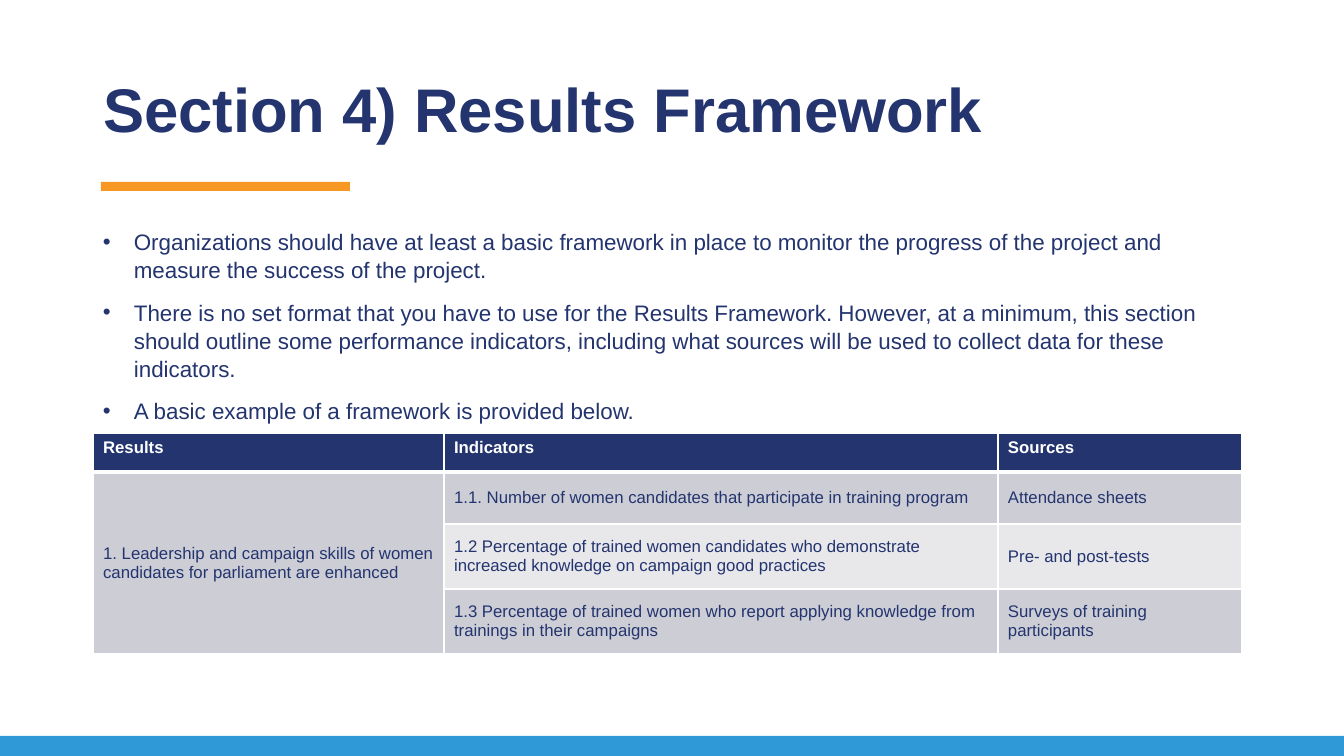
from lxml.etree import SubElement
from pptx import Presentation
from pptx.dml.color import RGBColor
from pptx.enum.shapes import MSO_SHAPE as Shape
from pptx.enum.text import MSO_ANCHOR as Anchor, MSO_AUTO_SIZE as AutoSize, PP_ALIGN as Align
from pptx.oxml.ns import qn
from pptx.util import Pt

EMU_PER_PX = 914400 / 100.8
COLORS = {
    "navy": "23346F", "orange": "F89824", "blue": "2E99D6",
    "white": "FFFFFF", "band_dark": "CDCED5", "band_light": "E8E8EB",
}
GUIDANCE = [
    "Organizations should have at least a basic framework in place to monitor the progress "
    "of the project and measure the success of the project.",
    "There is no set format that you have to use for the Results Framework. However, at a minimum, "
    "this section should outline some performance indicators, including what sources will be used "
    "to collect data for these indicators.",
    "A basic example of a framework is provided below.",
]
FRAMEWORK = [
    ["Results", "Indicators", "Sources"],
    ["1. Leadership and campaign skills of women candidates for parliament are enhanced",
     "1.1. Number of women candidates that participate in training program",
     "Attendance sheets"],
    ["", "1.2 Percentage of trained women candidates who demonstrate increased knowledge "
         "on campaign good practices", "Pre- and post-tests"],
    ["", "1.3 Percentage of trained women who report applying knowledge from trainings "
         "in their campaigns", "Surveys of training participants"],
]


def px(length):
    return round(length * EMU_PER_PX)


def rgb(name):
    return RGBColor.from_string(COLORS[name])


class SlideBuilder:
    font = "Arial"

    def __init__(self, deck):
        self.slide = deck.slides.add_slide(deck.slide_layouts[5])

    def add_text(self, paragraph, text, size, color="navy", bold=False):
        run = paragraph.add_run()
        run.text = text
        style = {"name": self.font, "size": Pt(size), "bold": bold}
        for key, value in style.items():
            setattr(run.font, key, value)
        run.font.color.rgb = rgb(color)

    def bar(self, left, top, width, height, color):
        bar = self.slide.shapes.add_shape(Shape.RECTANGLE, *map(px, (left, top, width, height)))
        bar.shadow.inherit = False
        bar.fill.solid()
        bar.fill.fore_color.rgb = rgb(color)
        bar.line.fill.background()

    def title(self, text, left, top, width, height):
        title = self.slide.shapes.title
        place = {"left": left, "top": top, "width": width, "height": height}
        for key, value in place.items():
            setattr(title, key, px(value))
        frame = title.text_frame
        layout = {"word_wrap": True, "auto_size": AutoSize.NONE, "vertical_anchor": Anchor.MIDDLE}
        for key, value in layout.items():
            setattr(frame, key, value)
        heading = frame.paragraphs[0]
        heading.alignment = Align.LEFT
        heading.line_spacing = 0.9
        self.add_text(heading, text, 44, bold=True)

    def bullets(self, items, left, top, width, height, indent=31):
        frame = self.slide.shapes.add_textbox(*map(px, (left, top, width, height))).text_frame
        frame.word_wrap = True
        for number, item in enumerate(items):
            point = frame.add_paragraph() if number else frame.paragraphs[0]
            props = point._p.get_or_add_pPr()
            props.set("marL", str(px(indent)))
            props.set("indent", str(-px(indent)))
            SubElement(props, qn("a:buFont"), typeface=self.font)
            SubElement(props, qn("a:buChar"), char="•")
            point.line_spacing = 1.05
            if number:
                point.space_before = Pt(10)
            self.add_text(point, item, 16)

    def borders(self, cell, top=1, bottom=1):
        """Draw white cell edges; call before the fill, which must follow them in the XML."""
        props = cell._tc.get_or_add_tcPr()
        for side, weight in {"L": 1, "R": 1, "T": top, "B": bottom}.items():
            edge = SubElement(props, qn(f"a:ln{side}"), w=str(Pt(weight)))
            fill = SubElement(edge, qn("a:solidFill"))
            SubElement(fill, qn("a:srgbClr"), val=COLORS["white"])

    def table(self, rows, left, top, widths, heights):
        place = map(px, (left, top, sum(widths), sum(heights)))
        table = self.slide.shapes.add_table(len(rows), len(widths), *place).table
        for column, width in zip(table.columns, widths):
            column.width = px(width)
        for row, height in zip(table.rows, heights):
            row.height = px(height)
        table.cell(1, 0).merge(table.cell(len(rows) - 1, 0))
        for r, texts in enumerate(rows):
            header = r == 0
            band = "navy" if header else "band_dark" if r % 2 else "band_light"
            for c, text in enumerate(texts):
                cell = table.cell(r, c)
                self.borders(cell, top=3 if r == 1 else 1, bottom=3 if header else 1)
                cell.fill.solid()
                cell.fill.fore_color.rgb = rgb(band)
                cell.vertical_anchor = Anchor.TOP if header else Anchor.MIDDLE
                if text:
                    self.add_text(cell.text_frame.paragraphs[0], text, 12,
                                  "white" if header else "navy", header)


def main():
    deck = Presentation()
    deck.slide_width, deck.slide_height = px(1344), px(756)
    slide = SlideBuilder(deck)
    slide.bar(0, 736, 1344, 20, "blue")
    slide.bar(101, 182, 249, 9, "orange")
    slide.title("Section 4) Results Framework", 93, 40, 1159, 146)
    slide.bullets(GUIDANCE, 93, 222, 1159, 460)
    slide.table(FRAMEWORK, 93, 433, [351, 554, 244], [39, 52, 65, 65])
    deck.save("out.pptx")


if __name__ == "__main__":
    main()
